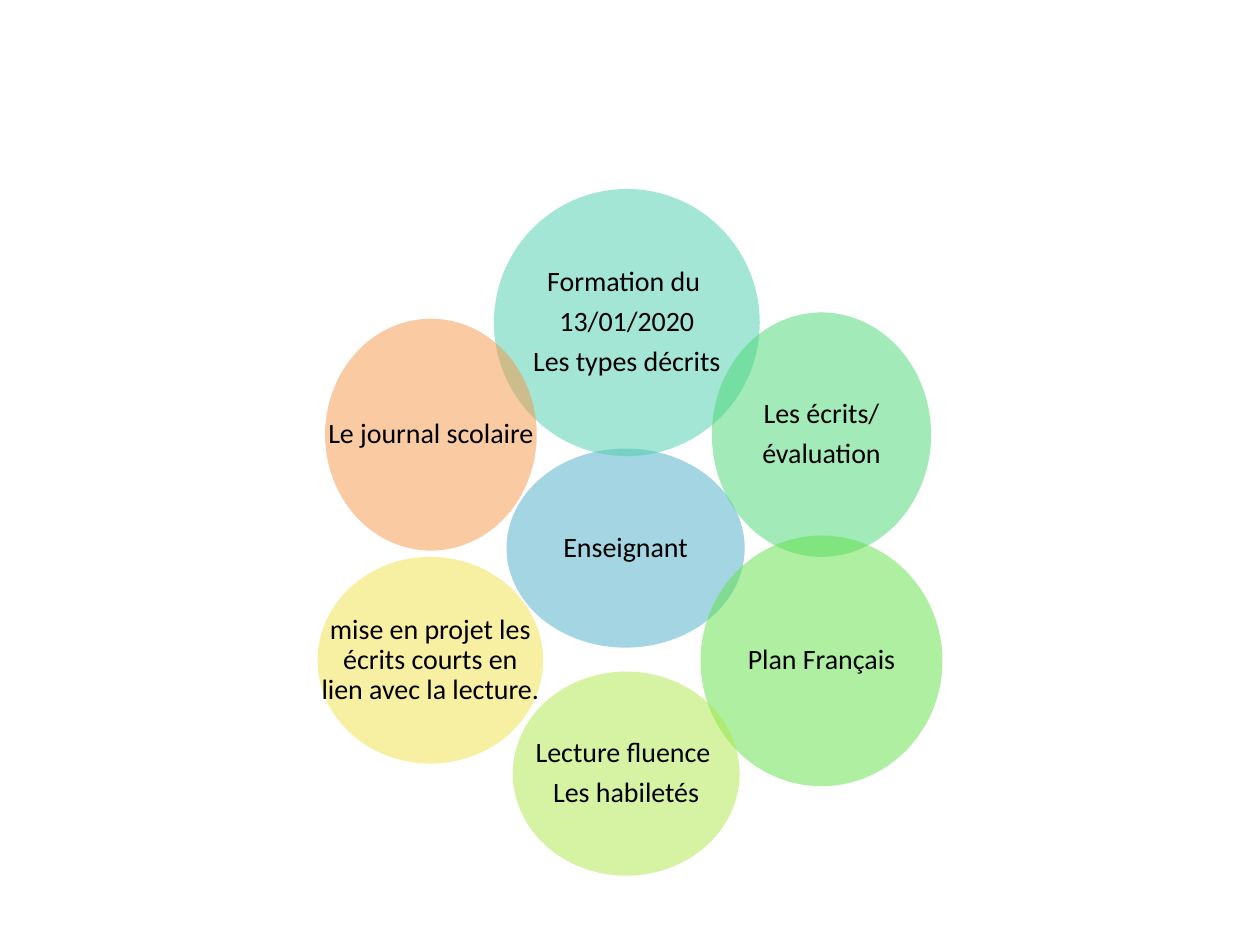
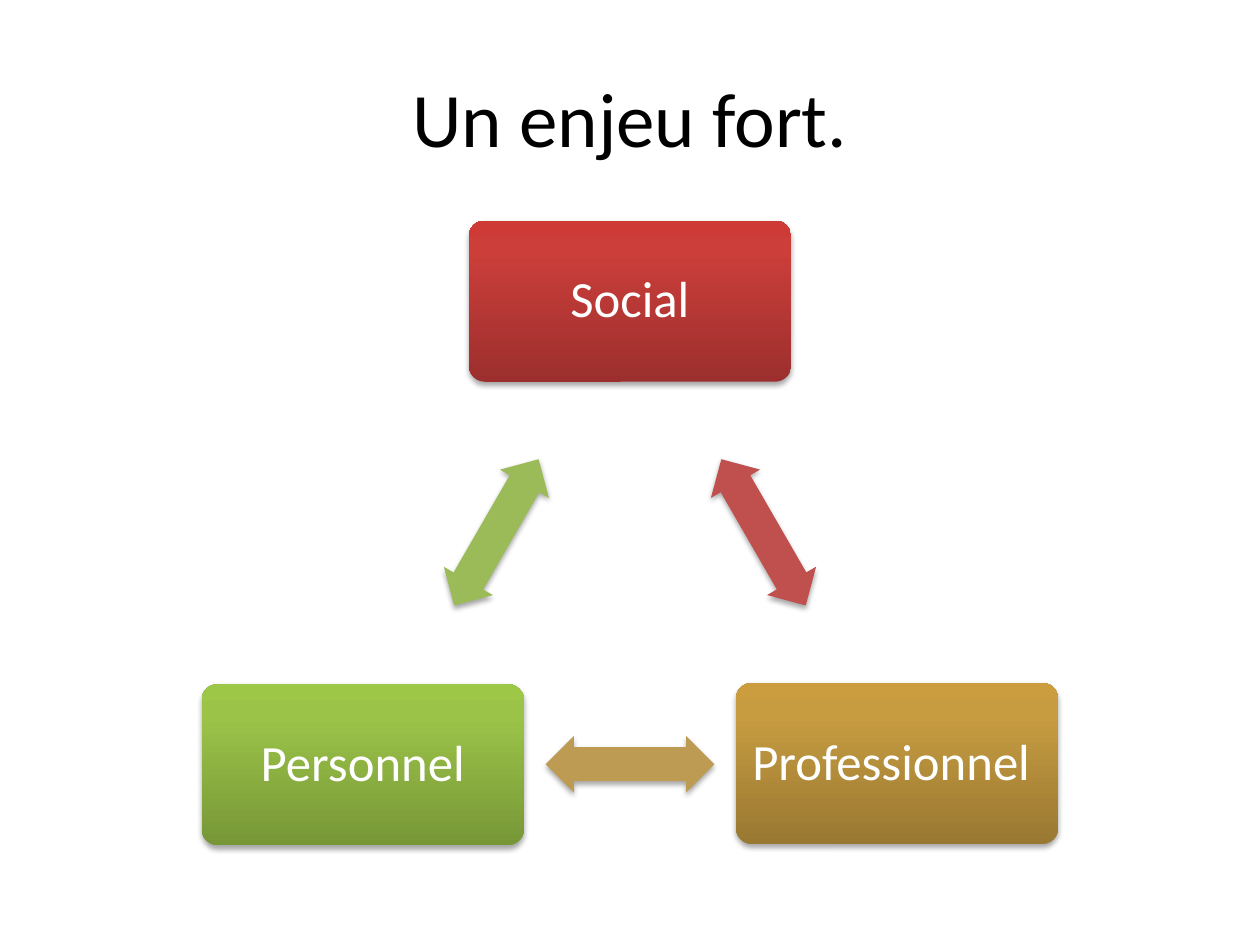
from copy import deepcopy
from math import cos, radians, sin

from lxml import etree
from pptx import Presentation
from pptx import util as u
from pptx.dml.color import RGBColor
from pptx.enum import shapes, text
from pptx.oxml import ns

# Shared style
FONT = "Calibri"
BLACK, WHITE = "000000", "FFFFFF"
Inches, Pt = u.Inches, u.Pt

# Slide 1: label, colour, width, height; the six petals run clockwise from the top
TEACHER = ("Enseignant", "4BACC6", 1.89, 1.58)
PETALS = [
    ("Formation du \n13/01/2020\nLes types décrits", "49CFAE", 2.11, 2.12),
    ("Les écrits/\névaluation", "47D872", 1.74, 1.94),
    ("Plan Français", "60E146", 1.92, 1.99),
    ("Lecture fluence \nLes habiletés", "ACE946", 1.8, 1.62),
    ("mise en projet les écrits courts en lien avec la lecture.", "F0E146", 1.79, 1.64),
    ("Le journal scolaire", "F79646", 1.68, 1.84),
]

# Slide 2: label, gradient from bottom to top, colour of the arrow to the next stake
STAKES = [
    ("Social", ("9C2F2D", "CB3E3A", "CE3B37"), "C0504D"),
    ("Professionnel ", ("997832", "C79C41", "CB9D3F"), "BD9B53"),
    ("Personnel", ("779737", "9BC348", "9DC746"), "9BBB59"),
]


def color(hex_code):
    return RGBColor.from_string(hex_code)


def ring(center_x, center_y, radius, count):
    """Points evenly spaced on a circle, clockwise from the top."""
    angles = [radians(360 * step / count) for step in range(count)]
    return [(center_x + radius * sin(a), center_y - radius * cos(a)) for a in angles]


def frame_at(center, width, height):
    x, y = center
    return [Inches(round(v, 2)) for v in (x - width / 2, y - height / 2, width, height)]


def add_shape(page, kind, center, width, height):
    shape = page.shapes.add_shape(kind, *frame_at(center, width, height))
    shape.shadow.inherit = False
    shape.line.fill.background()
    return shape


def fill_solid(shape, hex_code):
    shape.fill.solid()
    shape.fill.fore_color.rgb = color(hex_code)


def fill_gradient(shape, hex_codes):
    shape.fill.gradient()
    shape.fill.gradient_angle = 90
    stop_list = shape.element.spPr.find(".//" + ns.qn("a:gsLst"))
    stop_list.append(deepcopy(stop_list[-1]))
    for stop, hex_code, position in zip(shape.fill.gradient_stops, hex_codes, (0, 0.8, 1)):
        stop.color.rgb = color(hex_code)
        stop.position = position


def add_shadow(shape):
    effects = shape.element.spPr.find(ns.qn("a:effectLst"))
    shadow = etree.SubElement(effects, ns.qn("a:outerShdw"), blurRad="40000",
                              dist="23000", dir="5400000", rotWithShape="0")
    black = etree.SubElement(shadow, ns.qn("a:srgbClr"), val=BLACK)
    etree.SubElement(black, ns.qn("a:alpha"), val="35000")


def write(box, words, size, hex_code, inset, line_spacing=0.9):
    frame = box.text_frame
    frame.text = words
    frame.word_wrap = True
    frame.vertical_anchor = text.MSO_ANCHOR.MIDDLE
    frame.margin_left = frame.margin_right = Inches(inset)
    frame.margin_top = frame.margin_bottom = Inches(inset)
    for index, para in enumerate(frame.paragraphs):
        para.alignment = text.PP_ALIGN.CENTER
        para.line_spacing = line_spacing
        if index:
            para.space_before = Pt(size * 0.35)
        for span in para.runs:
            span.font.name = FONT
            span.font.size = Pt(size)
            span.font.color.rgb = color(hex_code)


def add_title(page, words):
    box = page.shapes.add_textbox(*frame_at((5, 0.92), 9, 1.25))
    write(box, words, 44, BLACK, 0.1, 1)


def add_circle(page, center, label, hex_code, width, height):
    circle = add_shape(page, shapes.MSO_SHAPE.OVAL, center, width, height)
    fill_solid(circle, hex_code)
    tint = circle.element.spPr.find(".//" + ns.qn("a:srgbClr"))
    etree.SubElement(tint, ns.qn("a:alpha"), val="50000")
    # The label uses the full width of the circle, so it has its own box
    box = page.shapes.add_textbox(*frame_at(center, width, height))
    write(box, label, 16, BLACK, 0.02)


def add_stake(page, center, label, gradient):
    card = add_shape(page, shapes.MSO_SHAPE.ROUNDED_RECTANGLE, center, 2.56, 1.28)
    card.adjustments[0] = 0.1
    fill_gradient(card, gradient)
    add_shadow(card)
    write(card, label, 29, WHITE, 0.08)


def add_arrow(page, start, end, rotation, hex_code):
    middle = [(a + b) / 2 for a, b in zip(start, end)]
    arrow = add_shape(page, shapes.MSO_SHAPE.LEFT_RIGHT_ARROW, middle, 1.34, 0.45)
    arrow.adjustments[0] = 0.6
    arrow.adjustments[1] = 0.5
    arrow.rotation = rotation
    fill_solid(arrow, hex_code)
    add_shadow(arrow)


def build_flower(page):
    center = (4.97, 4.35)
    add_circle(page, center, *TEACHER)
    for point, petal in zip(ring(*center, 1.79, len(PETALS)), PETALS):
        add_circle(page, point, *petal)


def build_triangle(page):
    add_title(page, "Un enjeu fort.")
    corners = ring(5, 4.84, 2.45, len(STAKES))
    for index, (label, gradient, arrow_color) in enumerate(STAKES):
        following = corners[(index + 1) % len(corners)]
        add_stake(page, corners[index], label, gradient)
        add_arrow(page, corners[index], following, 60 + 120 * index, arrow_color)


def main():
    deck = Presentation()
    deck.slide_width, deck.slide_height = Inches(10), Inches(7.5)
    blank = deck.slide_layouts[6]
    for build in (build_flower, build_triangle):
        build(deck.slides.add_slide(blank))
    deck.save("out.pptx")


if __name__ == "__main__":
    main()
